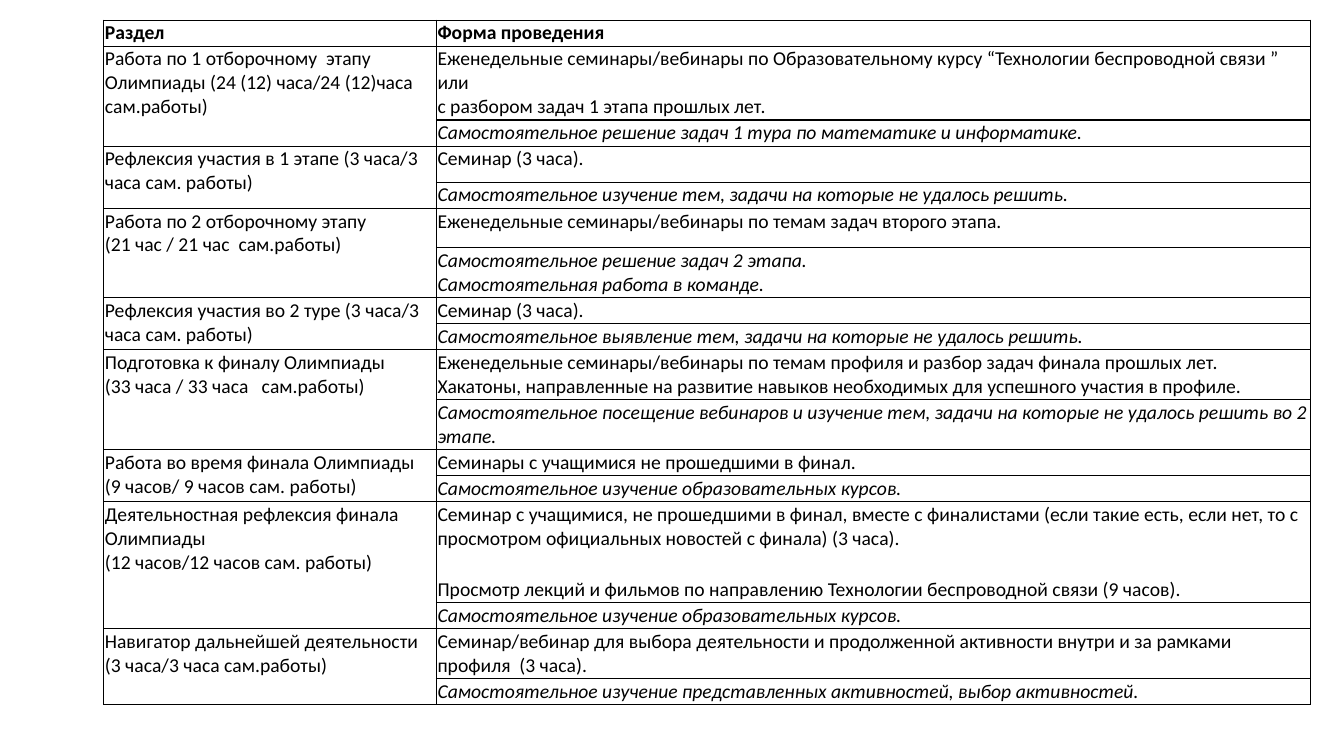
from lxml import etree
from pptx import Presentation
from pptx.dml.color import RGBColor
from pptx.enum.text import MSO_ANCHOR
from pptx.oxml.ns import qn
from pptx.util import Pt

TOP = MSO_ANCHOR.TOP
FONT = "Calibri"
TEXT_SIZE = 14
INSET = 0.72
BORDER_WIDTH = 1
COLORS = {"text": "000000", "border": "000000"}
COLUMN_WIDTHS = (237.6, 624.2)
ONE_LINE = 18.6
TWO_LINES = 35.7
THREE_LINES = 52.8
PARAGRAPH_GAP = 19.5

HEADINGS = ("Раздел", "Форма проведения")
SECTIONS = [
    (["Работа по 1 отборочному  этапу Олимпиады (24 (12) часа/24 (12)часа  сам.работы)"],
     ["Еженедельные семинары/вебинары по Образовательному курсу “Технологии беспроводной связи ” или",
      "с разбором задач 1 этапа прошлых лет."],
     ["Самостоятельное решение задач 1 тура по математике и информатике."],
     (THREE_LINES, ONE_LINE), 0),
    (["Рефлексия участия в 1 этапе (3 часа/3 часа сам. работы)"],
     ["Семинар (3 часа)."],
     ["Самостоятельное изучение тем, задачи на которые не удалось решить."],
     (25.9, ONE_LINE), 0),
    (["Работа по 2 отборочному этапу", "(21 час / 21 час  сам.работы)"],
     ["Еженедельные семинары/вебинары по темам задач второго этапа."],
     ["Самостоятельное решение задач 2 этапа.\nСамостоятельная работа в команде."],
     (28.1, TWO_LINES), 0),
    (["Рефлексия участия во 2 туре (3 часа/3 часа сам. работы)"],
     ["Семинар (3 часа)."],
     ["Самостоятельное выявление тем, задачи на которые не удалось решить."],
     (ONE_LINE, ONE_LINE), 0),
    (["Подготовка к финалу Олимпиады", "(33 часа / 33 часа   сам.работы)"],
     ["Еженедельные семинары/вебинары по темам профиля и разбор задач финала прошлых лет.",
      "Хакатоны, направленные на развитие навыков необходимых для успешного участия в профиле."],
     ["Самостоятельное посещение вебинаров и изучение тем, задачи на которые не удалось решить во 2 этапе."],
     (TWO_LINES, TWO_LINES), 0),
    (["Работа во время финала Олимпиады", "(9 часов/ 9 часов сам. работы)"],
     ["Семинары с учащимися не прошедшими в финал."],
     ["Самостоятельное изучение образовательных курсов."],
     (ONE_LINE, ONE_LINE), 0),
    (["Деятельностная рефлексия финала Олимпиады", "(12 часов/12 часов сам. работы)"],
     ["Семинар с учащимися, не прошедшими в финал, вместе с финалистами (если такие есть, "
      "если нет, то с просмотром официальных новостей с финала) (3 часа).",
      "Просмотр лекций и фильмов по направлению Технологии беспроводной связи (9 часов)."],
     ["Самостоятельное изучение образовательных курсов."],
     (72.2, ONE_LINE), PARAGRAPH_GAP),
    (["Навигатор дальнейшей деятельности", "(3 часа/3 часа сам.работы)"],
     ["Семинар/вебинар для выбора деятельности и продолженной активности внутри и за рамками профиля  (3 часа)."],
     ["Самостоятельное изучение представленных активностей, выбор активностей."],
     (TWO_LINES, ONE_LINE), 0),
]


def add_span(para, text, bold, italic):
    span = para.add_run()
    span.text = text
    font = span.font
    font.name = FONT
    font.size = Pt(TEXT_SIZE)
    font.bold = bold
    font.italic = italic
    font.color.rgb = RGBColor.from_string(COLORS["text"])


def fill_cell(cell, paragraphs, bold=False, italic=False, gap=0):
    frame = cell.text_frame
    for index, text in enumerate(paragraphs):
        para = frame.add_paragraph() if index else frame.paragraphs[0]
        if index and gap:
            para.space_before = Pt(gap)
        for line_index, line in enumerate(text.split("\n")):
            if line_index:
                para.add_line_break()
            add_span(para, line, bold, italic)


def style_cell(cell):
    cell.margin_left = cell.margin_right = Pt(INSET)
    cell.margin_top = cell.margin_bottom = Pt(INSET)
    cell.vertical_anchor = TOP
    cell.fill.background()
    properties = cell._tc.get_or_add_tcPr()
    for position, side in enumerate(("lnL", "lnR", "lnT", "lnB")):
        border = etree.Element(qn("a:" + side), w=str(Pt(BORDER_WIDTH)))
        fill = etree.SubElement(border, qn("a:solidFill"))
        etree.SubElement(fill, qn("a:srgbClr"), val=COLORS["border"])
        properties.insert(position, border)


def add_plan_table(page):
    heights = [ONE_LINE] + [height for section in SECTIONS for height in section[3]]
    table = page.shapes.add_table(
        len(heights), len(COLUMN_WIDTHS), Pt(74.2), Pt(14.4),
        Pt(sum(COLUMN_WIDTHS)), Pt(sum(heights))).table
    table.first_row = False
    table.horz_banding = False
    for column, width in zip(table.columns, COLUMN_WIDTHS):
        column.width = Pt(width)
    for row, height in zip(table.rows, heights):
        row.height = Pt(height)
        for cell in row.cells:
            style_cell(cell)
    return table


def add_section(table, row, section):
    name, classes, self_study, _, gap = section
    name_cell = table.cell(row, 0)
    name_cell.merge(table.cell(row + 1, 0))
    fill_cell(name_cell, name)
    fill_cell(table.cell(row, 1), classes, gap=gap)
    fill_cell(table.cell(row + 1, 1), self_study, italic=True)


def main():
    deck = Presentation()
    deck.slide_width = Pt(960)
    deck.slide_height = Pt(540)
    page = deck.slides.add_slide(deck.slide_layouts[6])
    table = add_plan_table(page)
    for column, heading in enumerate(HEADINGS):
        fill_cell(table.cell(0, column), [heading], bold=True)
    for index, section in enumerate(SECTIONS):
        add_section(table, 1 + 2 * index, section)
    deck.save("out.pptx")


if __name__ == "__main__":
    main()
